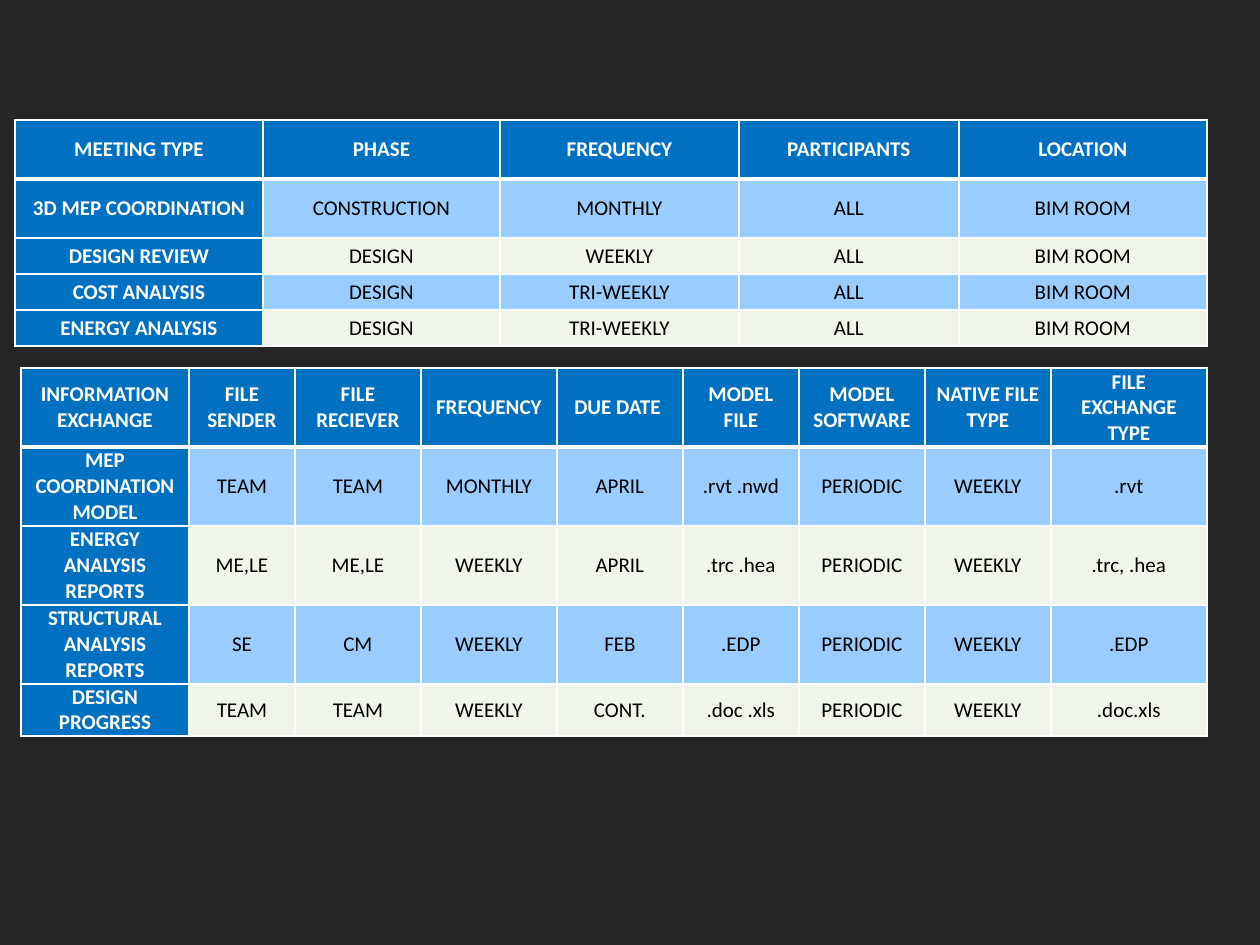
from lxml.etree import SubElement
from pptx import Presentation
from pptx.dml.color import RGBColor
from pptx.enum.text import MSO_ANCHOR, PP_ALIGN
from pptx.oxml.ns import qn
from pptx.util import Emu, Pt

DARK = RGBColor(0x26, 0x26, 0x26)
BLUE = RGBColor(0x00, 0x70, 0xC0)
SKY = RGBColor(0x99, 0xCC, 0xFF)
PALE = RGBColor(0xEF, 0xF5, 0xE8)
WHITE = RGBColor(0xFF, 0xFF, 0xFF)
BLACK = RGBColor(0x00, 0x00, 0x00)

MEETINGS = {
    "left": 15, "top": 120, "inset": 14,
    "widths": [248, 237, 239, 220, 248],
    "heights": [59, 59, 36, 36, 36],
    "rows": [
        ["MEETING TYPE", "PHASE", "FREQUENCY", "PARTICIPANTS", "LOCATION"],
        ["3D MEP COORDINATION", "CONSTRUCTION", "MONTHLY", "ALL", "BIM ROOM"],
        ["DESIGN REVIEW", "DESIGN", "WEEKLY", "ALL", "BIM ROOM"],
        ["COST ANALYSIS", "DESIGN", "TRI-WEEKLY", "ALL", "BIM ROOM"],
        ["ENERGY ANALYSIS", "DESIGN", "TRI-WEEKLY", "ALL", "BIM ROOM"],
    ],
}
EXCHANGE = {
    "left": 21, "top": 368, "inset": 11,
    "widths": [168, 106, 126, 136, 126, 116, 126, 126, 156],
    "heights": [79, 79, 79, 79, 52],
    "rows": [
        ["INFORMATION EXCHANGE", "FILE SENDER", "FILE RECIEVER", "FREQUENCY",
         "DUE DATE ", "MODEL FILE", "MODEL SOFTWARE", "NATIVE FILE TYPE",
         "FILE EXCHANGE TYPE"],
        ["MEP COORDINATION MODEL", "TEAM", "TEAM", "MONTHLY", "APRIL",
         ".rvt .nwd", "PERIODIC", "WEEKLY", ".rvt"],
        ["ENERGY ANALYSIS REPORTS", "ME,LE", "ME,LE", "WEEKLY", "APRIL",
         ".trc .hea", "PERIODIC", "WEEKLY", ".trc, .hea"],
        ["STRUCTURAL ANALYSIS REPORTS", "SE", "CM", "WEEKLY", "FEB",
         ".EDP", "PERIODIC", "WEEKLY", ".EDP"],
        ["DESIGN PROGRESS", "TEAM", "TEAM", "WEEKLY", "CONT.",
         ".doc .xls", "PERIODIC", "WEEKLY", ".doc.xls"],
    ],
}


def px(n):
    return Emu(round(n * 914400 / 126))


def add_borders(cell, row):
    props = cell._tc.get_or_add_tcPr()
    widths = {"lnL": 1, "lnR": 1,
              "lnT": 3 if row == 1 else 1, "lnB": 3 if row == 0 else 1}
    for tag, width in widths.items():
        line = SubElement(props, qn("a:" + tag), w=str(Pt(width)))
        fill = SubElement(line, qn("a:solidFill"))
        SubElement(fill, qn("a:srgbClr"), val=str(WHITE))


def style_cell(cell, text, row, col, inset):
    head = row == 0 or col == 0
    add_borders(cell, row)
    cell.fill.solid()
    cell.fill.fore_color.rgb = BLUE if head else SKY if row % 2 else PALE
    cell.vertical_anchor = MSO_ANCHOR.MIDDLE
    cell.margin_left = cell.margin_right = px(inset)
    cell.margin_top = cell.margin_bottom = 0
    cell.text = text
    para = cell.text_frame.paragraphs[0]
    para.alignment = PP_ALIGN.CENTER
    font = para.font
    font.name = "Calibri"
    font.size = Pt(12)
    font.bold = head
    font.color.rgb = WHITE if head else BLACK


def add_grid(slide, data):
    rows, widths, heights = data["rows"], data["widths"], data["heights"]
    table = slide.shapes.add_table(
        len(rows), len(widths), px(data["left"]), px(data["top"]),
        px(sum(widths)), px(sum(heights))).table
    table.first_col = True
    for column, width in zip(table.columns, widths):
        column.width = px(width)
    for line, height in zip(table.rows, heights):
        line.height = px(height)
    for row, texts in enumerate(rows):
        for col, text in enumerate(texts):
            style_cell(table.cell(row, col), text, row, col, data["inset"])


def main():
    deck = Presentation()
    deck.slide_width, deck.slide_height = px(1260), px(945)
    slide = deck.slides.add_slide(deck.slide_layouts[6])
    slide.background.fill.solid()
    slide.background.fill.fore_color.rgb = DARK
    for data in (MEETINGS, EXCHANGE):
        add_grid(slide, data)
    deck.save("out.pptx")


if __name__ == "__main__":
    main()
